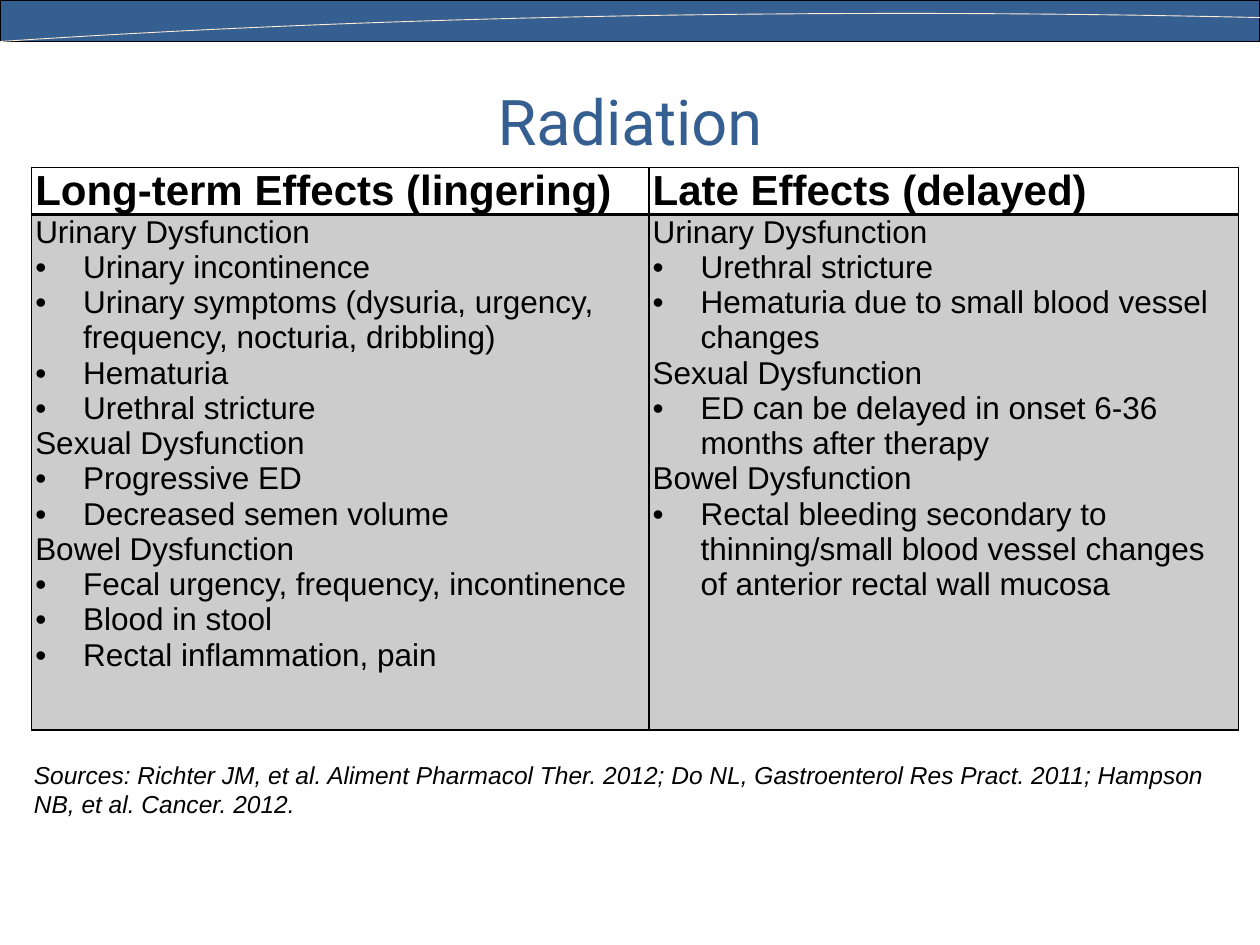
"""Build the slide on long-term and late effects of radiation."""
from pptx import Presentation, util as u
from pptx.dml.color import RGBColor
from pptx.enum import shapes, text
from pptx.oxml import ns, xmlchemy

TITLE = "Radiation"
EFFECTS = [
    ("Long-term Effects (lingering)", 4.9, [
        ("Urinary Dysfunction", [
            "Urinary incontinence",
            "Urinary symptoms (dysuria, urgency, frequency, nocturia, dribbling)",
            "Hematuria",
            "Urethral stricture"]),
        ("Sexual Dysfunction", ["Progressive ED", "Decreased semen volume"]),
        ("Bowel Dysfunction", [
            "Fecal urgency, frequency, incontinence",
            "Blood in stool",
            "Rectal inflammation, pain"])]),
    ("Late Effects (delayed)", 4.68, [
        ("Urinary Dysfunction", [
            "Urethral stricture",
            "Hematuria due to small blood vessel changes"]),
        ("Sexual Dysfunction", ["ED can be delayed in onset 6-36 months after therapy"]),
        ("Bowel Dysfunction", [
            "Rectal bleeding secondary to thinning/small blood vessel changes "
            "of anterior rectal wall mucosa"])]),
]
SOURCES = ("Sources: Richter JM, et al. Aliment Pharmacol Ther. 2012; Do NL, Gastroenterol "
           "Res Pract. 2011; Hampson NB, et al. Cancer. 2012.")
ROW_HEIGHTS = [0.37, 4.09]
SWOOSH = [(10, 0.14), (7.44, 0.08), (3.79, 0.08), (0, 0.33)]
THEME = {
    "blue": "365F91", "ink": "000000", "cream": "FFEAD5", "shade": 20,
    "heading_font": "Roboto", "body_font": "Arial",
    "title": 36, "header": 24, "body": 18, "source": 14, "indent": 0.38,
}


def color(name):
    return RGBColor.from_string(THEME[name])


def add_child(parent, tag, **attributes):
    child = xmlchemy.OxmlElement(tag)
    for key, value in attributes.items():
        child.set(key, str(value))
    parent.append(child)
    return child


def write(frame, content, size="body", font="body_font", ink="ink", bold=False,
          italic=False, bullet=False, align=text.PP_ALIGN.LEFT):
    para = frame.paragraphs[0]
    if para.runs:
        para = frame.add_paragraph()
    para.alignment = align
    if bullet:
        properties = para._p.get_or_add_pPr()
        indent = u.Inches(THEME["indent"])
        properties.set("marL", str(indent))
        properties.set("indent", str(-indent))
        add_child(properties, "a:buFont", typeface=THEME["body_font"])
        add_child(properties, "a:buChar", char="•")
    span = para.add_run()
    span.text = content
    span.font.name, span.font.size = THEME[font], u.Pt(THEME[size])
    span.font.bold, span.font.italic = bold, italic
    span.font.color.rgb = color(ink)


def set_borders(cell, **widths):
    for side, width in widths.items():
        line = add_child(cell._tc.get_or_add_tcPr(), f"a:ln{side}", w=u.Pt(width))
        add_child(add_child(line, "a:solidFill"), "a:srgbClr", val=THEME["ink"])


def add_band(page):
    band = page.shapes.add_shape(shapes.MSO_SHAPE.RECTANGLE, 0, 0, u.Inches(10), u.Inches(0.33))
    band.shadow.inherit = False
    band.fill.solid()
    band.fill.fore_color.rgb = color("blue")
    band.line.color.rgb, band.line.width = color("ink"), u.Pt(0.75)


def add_swoosh(page, steps=40):
    points = []
    for step in range(steps + 1):
        t = step / steps
        weights = [(1 - t) ** 3, 3 * t * (1 - t) ** 2, 3 * t * t * (1 - t), t ** 3]
        points.append(tuple(u.Inches(sum(w * p[axis] for w, p in zip(weights, SWOOSH)))
                            for axis in (0, 1)))
    builder = page.shapes.build_freeform(*points[0])
    builder.add_line_segments(points[1:], close=False)
    curve = builder.convert_to_shape()
    curve.shadow.inherit = False
    curve.fill.background()
    curve.line.color.rgb, curve.line.width = color("cream"), u.Pt(0.5)


def add_title(page):
    title = page.shapes.title
    title.left, title.top, title.width, title.height = map(u.Inches, (0.5, 0.33, 9, 1.25))
    title.text_frame.vertical_anchor = text.MSO_ANCHOR.MIDDLE
    write(title.text_frame, TITLE, size="title", font="heading_font", ink="blue",
          align=text.PP_ALIGN.CENTER)


def add_effects(page):
    width = sum(column[1] for column in EFFECTS)
    table = page.shapes.add_table(2, len(EFFECTS), u.Inches(0.25), u.Inches(1.33),
                                  u.Inches(width), u.Inches(sum(ROW_HEIGHTS))).table
    table.first_row = table.horz_banding = False
    for row, height in zip(table.rows, ROW_HEIGHTS):
        row.height = u.Inches(height)
    for cell in table.iter_cells():
        cell.margin_left = cell.margin_right = u.Inches(0.03)
        cell.margin_top = cell.margin_bottom = 0
    for index, (heading, column_width, groups) in enumerate(EFFECTS):
        table.columns[index].width = u.Inches(column_width)
        header, body = table.cell(0, index), table.cell(1, index)
        set_borders(header, L=1, R=1, T=1, B=2)
        header.fill.background()
        write(header.text_frame, heading, size="header", bold=True)
        set_borders(body, L=1, R=1, T=2, B=1)
        body.fill.solid()
        body.fill.fore_color.rgb = color("ink")
        shade = body._tc.tcPr.find(ns.qn("a:solidFill")).find(ns.qn("a:srgbClr"))
        add_child(shade, "a:alpha", val=THEME["shade"] * 1000)
        for group, items in groups:
            write(body.text_frame, group)
            for item in items:
                write(body.text_frame, item, bullet=True)


def add_sources(page):
    box = page.shapes.add_textbox(*map(u.Inches, (0.17, 5.98, 9.75, 0.57)))
    box.text_frame.word_wrap = True
    write(box.text_frame, SOURCES, size="source", italic=True)


def main():
    deck = Presentation()
    deck.slide_width, deck.slide_height = u.Inches(10), u.Inches(7.5)
    page = deck.slides.add_slide(deck.slide_layouts[5])
    for add_part in (add_band, add_swoosh, add_title, add_effects, add_sources):
        add_part(page)
    deck.save("out.pptx")


if __name__ == "__main__":
    main()
